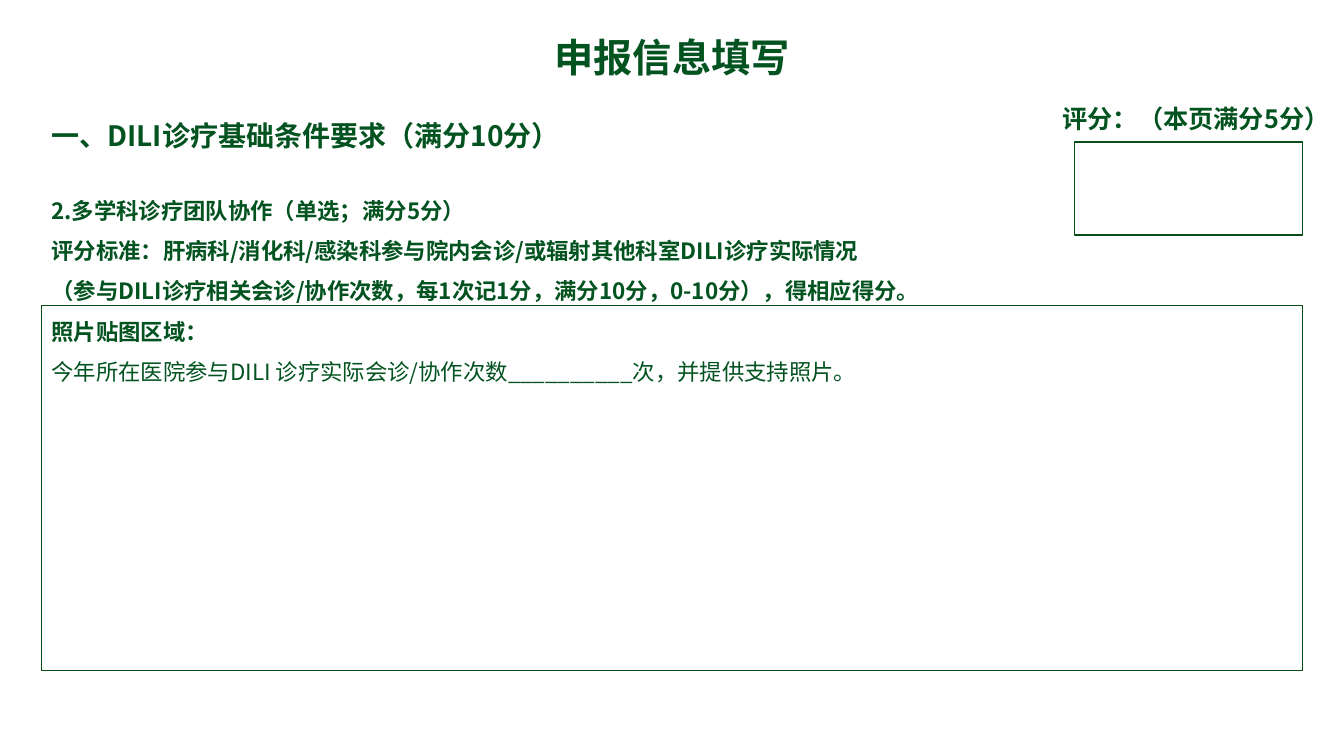
from lxml import etree
from pptx import Presentation
from pptx import util as u
from pptx.dml.color import RGBColor
from pptx.enum import shapes, text
from pptx.oxml import ns

FONT = "Noto Sans CJK SC"
TEXT_GREEN = RGBColor(0x03, 0x53, 0x20)
LINE_GREEN = RGBColor(0x07, 0x4D, 0x18)
JUSTIFY = text.PP_ALIGN.JUSTIFY


def place(shape, left, top, width, height):
    bounds = {"left": left, "top": top, "width": width, "height": height}
    for name, value in bounds.items():
        setattr(shape, name, u.Inches(value))


def write(shape, lines, size, alignment, spacing=1.0, side_margin=0.1):
    frame = shape.text_frame
    settings = {
        "word_wrap": True,
        "auto_size": text.MSO_AUTO_SIZE.NONE,
        "vertical_anchor": text.MSO_ANCHOR.TOP,
        "margin_left": u.Inches(side_margin),
        "margin_right": u.Inches(side_margin),
    }
    for name, value in settings.items():
        setattr(frame, name, value)
    for index, (line, bold) in enumerate(lines):
        paragraph = frame.paragraphs[0] if index == 0 else frame.add_paragraph()
        layout = {"alignment": alignment, "line_spacing": spacing, "space_before": u.Pt(0)}
        for name, value in layout.items():
            setattr(paragraph, name, value)
        properties = paragraph._p.get_or_add_pPr()
        properties.set("marL", "0")
        properties.set("indent", "0")
        etree.SubElement(properties, ns.qn("a:buNone"))
        run = paragraph.add_run()
        run.text = line
        for name, value in {"name": FONT, "size": u.Pt(size), "bold": bold}.items():
            setattr(run.font, name, value)
        run.font.color.rgb = TEXT_GREEN
        east_asian = etree.SubElement(run._r.get_or_add_rPr(), ns.qn("a:ea"))
        east_asian.set("typeface", FONT)


presentation = Presentation()
presentation.slide_width = u.Inches(13.33)
presentation.slide_height = u.Inches(7.5)
slide = presentation.slides.add_slide(presentation.slide_layouts[1])

title = slide.shapes.title
place(title, 5.4, 0.28, 2.53, 0.57)
write(title, [("申报信息填写", True)], 28, text.PP_ALIGN.CENTER, side_margin=0)

criteria = slide.placeholders[1]
place(criteria, 0.41, 1.77, 10.03, 2.48)
criteria_lines = [
    ("2.多学科诊疗团队协作（单选；满分5分）", True),
    ("评分标准：肝病科/消化科/感染科参与院内会诊/或辐射其他科室DILI诊疗实际情况", True),
    ("（参与DILI诊疗相关会诊/协作次数，每1次记1分，满分10分，0-10分），得相应得分。", True),
    ("照片贴图区域：", True),
    ("今年所在医院参与DILI 诊疗实际会诊/协作次数__________次，并提供支持照片。", False),
]
write(criteria, criteria_lines, 16, JUSTIFY, spacing=1.5)

labels = [
    ("一、DILI诊疗基础条件要求（满分10分）", 20, (0.41, 1.13, 6.67, 0.44)),
    ("评分：（本页满分5分）", 18, (10.44, 0.98, 3.06, 0.4)),
]
for label, size, bounds in labels:
    box = slide.shapes.add_textbox(*map(u.Inches, bounds))
    write(box, [(label, True)], size, JUSTIFY)

photo_area = (0.41, 3.03, 12.51, 3.62)
score_box = (10.66, 1.41, 2.26, 0.92)
for bounds in (photo_area, score_box):
    frame_shape = slide.shapes.add_shape(
        shapes.MSO_SHAPE.RECTANGLE, *map(u.Inches, bounds))
    frame_shape.shadow.inherit = False
    frame_shape.fill.background()
    frame_shape.line.color.rgb = LINE_GREEN
    frame_shape.line.width = u.Pt(1)

presentation.save("out.pptx")
